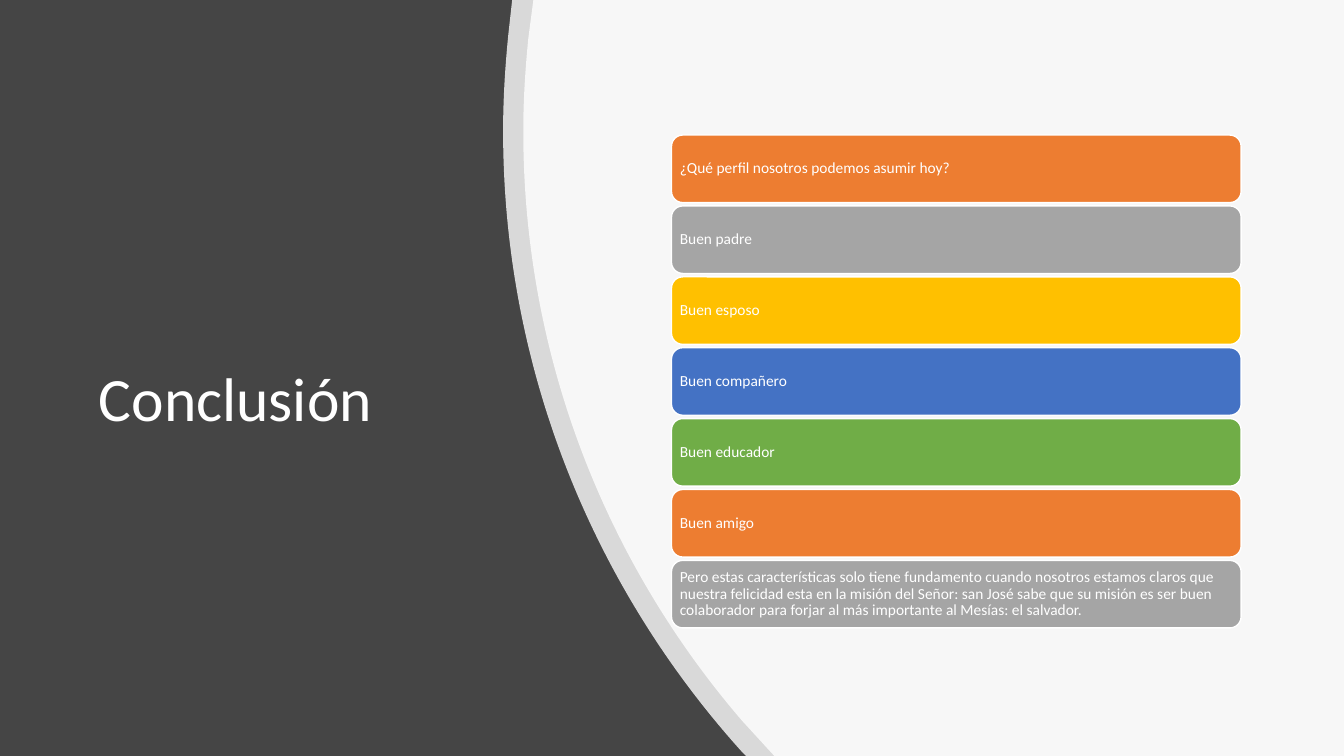
"""Build the conclusion slide: a curved panel, a title and a stack of coloured bars."""
from lxml.etree import SubElement
from pptx import Presentation
from pptx.dml.color import RGBColor
from pptx.enum.shapes import MSO_SHAPE
from pptx.enum.text import MSO_ANCHOR, PP_ALIGN
from pptx.oxml.ns import qn
from pptx.util import Inches, Pt

WIDTH, HEIGHT = 13.33, 7.5
COLOURS = {
    "dark": "454545", "white": "FFFFFF", "orange": "ED7D31", "grey": "A5A5A5",
    "gold": "FFC000", "blue": "4472C4", "green": "70AD47",
}
TITLE = "Conclusión"
BARS = [
    ("¿Qué perfil nosotros podemos asumir hoy?", "orange"),
    ("Buen padre", "grey"),
    ("Buen esposo", "gold"),
    ("Buen compañero", "blue"),
    ("Buen educador", "green"),
    ("Buen amigo", "orange"),
    ("Pero estas características solo tiene fundamento cuando nosotros estamos claros "
     "que nuestra felicidad esta en la misión del Señor: san José sabe que su misión es "
     "ser buen colaborador para forjar al más importante al Mesías: el salvador.", "grey"),
]
PANELS = [
    {"top": 5.08, "bottom": 7.4, "curve_start": (7.36, 7.46), "curve": [
        (5.89, 5.83), (4.99, 3.67), (4.99, 1.3),
        (4.99, 0.98), (5.01, 0.67), (5.04, 0.36)]},
    {"top": 5.29, "bottom": 7.68, "curve_start": (7.36, 7.15), "curve": [
        (6.01, 5.58), (5.19, 3.54), (5.19, 1.3),
        (5.19, 0.99), (5.21, 0.69), (5.24, 0.38)]},
]
PANEL_ALPHA = 80
BAR_LEFT, BAR_WIDTH, BAR_HEIGHT = 6.66, 5.65, 0.67
FIRST_TOP, LAST_TOP = 1.34, 5.56
BAR_PITCH = (LAST_TOP - FIRST_TOP) / (len(BARS) - 1)


def colour(name):
    return RGBColor.from_string(COLOURS[name])


def write_text(shape, text, size, inset_x=0.05, inset_y=0.05, space_after=0):
    frame = shape.text_frame
    frame.word_wrap = True
    frame.vertical_anchor = MSO_ANCHOR.MIDDLE
    frame.margin_left = frame.margin_right = Inches(inset_x)
    frame.margin_top = frame.margin_bottom = Inches(inset_y)
    paragraph = frame.paragraphs[0]
    paragraph.alignment = PP_ALIGN.LEFT
    paragraph.line_spacing = 0.9
    paragraph.space_after = Pt(space_after)
    run = paragraph.add_run()
    run.text = text
    run.font.name = "Calibri"
    run.font.size = Pt(size)
    run.font.color.rgb = colour("white")


def bend_lines(panel, count):
    """Turn the last count line segments into cubic curves of three points each."""
    outline = panel._element.find(".//" + qn("a:path"))
    lines = outline.findall(qn("a:lnTo"))[-count:]
    for first in range(0, count, 3):
        curve = SubElement(outline, qn("a:cubicBezTo"))
        lines[first].addprevious(curve)
        for line in lines[first:first + 3]:
            curve.append(line[0])
            outline.remove(line)


def add_panel(slide, top, bottom, curve_start, curve):
    outline = [(WIDTH, 0), (WIDTH, HEIGHT), (bottom, HEIGHT), curve_start, *curve]
    builder = slide.shapes.build_freeform(Inches(top), 0)
    builder.add_line_segments([(Inches(x), Inches(y)) for x, y in outline], close=True)
    panel = builder.convert_to_shape()
    bend_lines(panel, len(curve))
    panel.shadow.inherit = False
    panel.line.fill.background()
    panel.fill.solid()
    panel.fill.fore_color.rgb = colour("white")
    fill_colour = panel._element.spPr.find(qn("a:solidFill"))[0]
    SubElement(fill_colour, qn("a:alpha"), val=str(PANEL_ALPHA * 1000))


def add_bar(slide, row, text, fill):
    bar = slide.shapes.add_shape(
        MSO_SHAPE.ROUNDED_RECTANGLE, Inches(BAR_LEFT), Inches(FIRST_TOP + row * BAR_PITCH),
        Inches(BAR_WIDTH), Inches(BAR_HEIGHT))
    bar.shadow.inherit = False
    bar.fill.solid()
    bar.fill.fore_color.rgb = colour(fill)
    bar.line.color.rgb = colour("white")
    bar.line.width = Pt(1)
    write_text(bar, text, 11, space_after=4)


def main():
    presentation = Presentation()
    presentation.slide_width, presentation.slide_height = Inches(WIDTH), Inches(HEIGHT)
    slide = presentation.slides.add_slide(presentation.slide_layouts[5])
    slide.background.fill.solid()
    slide.background.fill.fore_color.rgb = colour("dark")

    title = slide.shapes.title
    title.left, title.top = Inches(0.88), Inches(1.53)
    title.width, title.height = Inches(3.92), Inches(4.9)
    write_text(title, TITLE, 44, inset_x=0.1)

    for panel in PANELS:
        add_panel(slide, **panel)
    for row, (text, fill) in enumerate(BARS):
        add_bar(slide, row, text, fill)
    presentation.save("out.pptx")


if __name__ == "__main__":
    main()
